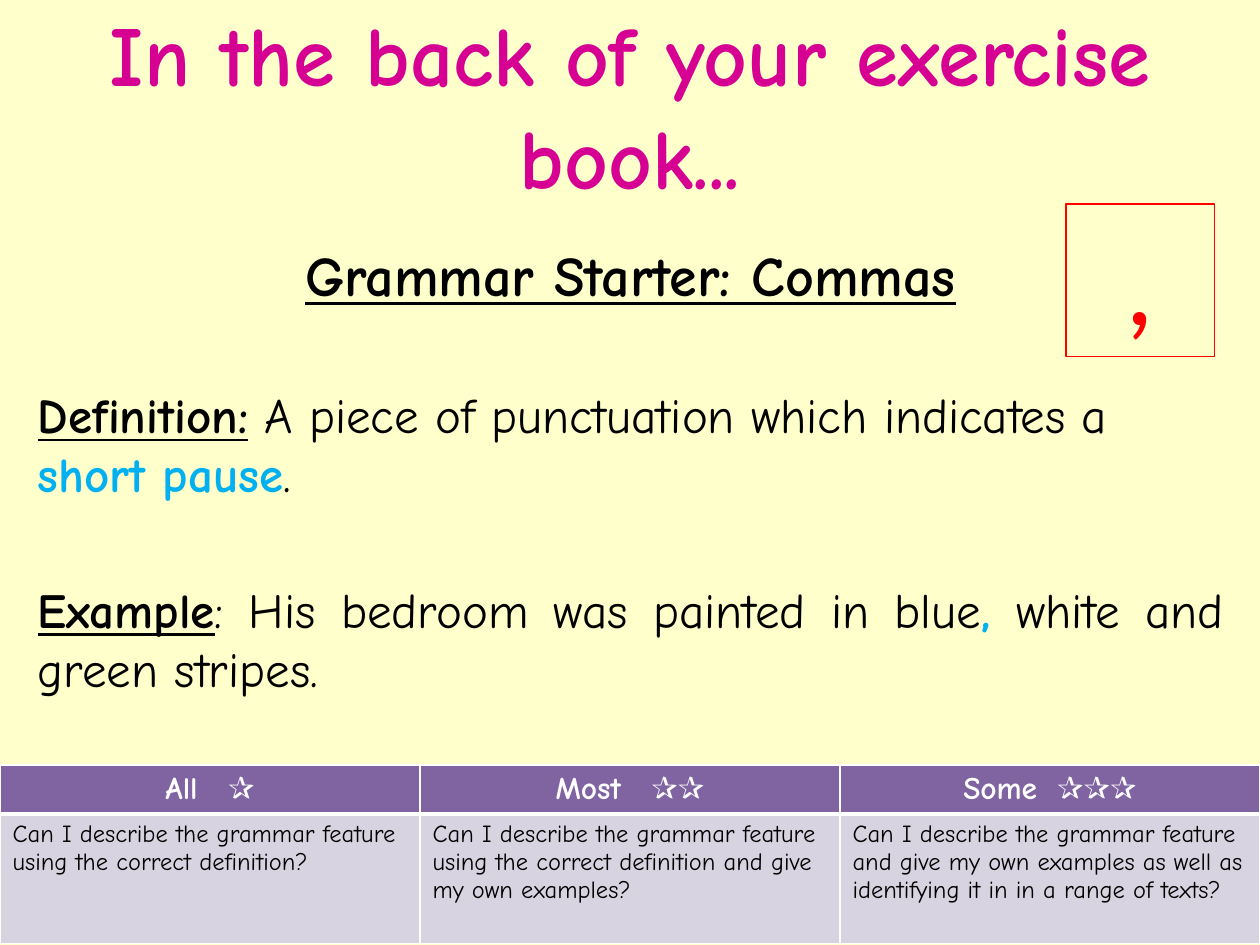
from lxml.etree import SubElement
from pptx import Presentation
from pptx.dml.color import RGBColor
from pptx.enum.shapes import MSO_SHAPE
from pptx.enum.text import MSO_ANCHOR, MSO_AUTO_SIZE, PP_ALIGN
from pptx.oxml import parse_xml
from pptx.oxml.ns import nsdecls, qn
from pptx.util import Inches, Pt

FONT = "Comic Neue"
COLOURS = {
    "cream": "FFFFCC", "pink": "D60093", "black": "000000", "blue": "00B0F0",
    "white": "FFFFFF", "purple": "8064A2", "lilac": "D8D3E0", "red": "FF0000",
}
DEFINITION = [
    ("Definition:", "heading"),
    (" A piece of punctuation which indicates a ", "plain"),
    ("short pause", "accent"),
    (".", "plain"),
]
EXAMPLE = [
    ("Example", "heading"),
    (": His bedroom was painted in blue", "plain"),
    (",", "accent"),
    (" white and green stripes.", "plain"),
]
TARGETS = [
    ("All", "✰", 11, "Can I describe the grammar feature using the correct definition?"),
    ("Most", "✰✰", 11, "Can I describe the grammar feature using the correct definition "
     "and give my own examples?"),
    ("Some", "✰✰✰", 5, "Can I describe the grammar feature and give my own examples "
     "as well as identifying it in in a range of texts?"),
]


def colour(name):
    """Return the named colour."""
    return RGBColor.from_string(COLOURS[name])


def place(shape, box):
    """Move a shape to a box of left, top, width and height in inches."""
    shape.left, shape.top, shape.width, shape.height = map(Inches, box)


def style(span, size, tint, bold=False, underline=False, font=FONT):
    """Format one run."""
    span.font.name = font
    span.font.size = Pt(size)
    span.font.bold = bold
    span.font.underline = underline
    span.font.color.rgb = colour(tint)


def add_title(page, box):
    """Fill the title placeholder."""
    title = page.shapes.title
    place(title, box)
    frame = title.text_frame
    frame.text = "In the back of your exercise book..."
    frame.auto_size = MSO_AUTO_SIZE.NONE
    frame.vertical_anchor = MSO_ANCHOR.MIDDLE
    frame.paragraphs[0].alignment = PP_ALIGN.CENTER
    style(frame.paragraphs[0].runs[0], 48.6, "pink", bold=True)


def add_lesson(page, box):
    """Fill the body placeholder with the heading, definition and example."""
    body = page.placeholders[1]
    place(body, box)
    frame = body.text_frame
    frame.auto_size = MSO_AUTO_SIZE.NONE
    paragraphs = [
        ([("Grammar Starter: Commas", "heading")], 32, PP_ALIGN.CENTER, 0),
        (DEFINITION, 28, PP_ALIGN.LEFT, 44),
        (EXAMPLE, 28, PP_ALIGN.JUSTIFY, 44),
    ]
    for index, (pieces, size, alignment, gap) in enumerate(paragraphs):
        para = frame.add_paragraph() if index else frame.paragraphs[0]
        para.alignment = alignment
        para.space_before = Pt(gap)
        properties = para._p.get_or_add_pPr()
        properties.set("marL", "0")
        properties.set("indent", "0")
        SubElement(properties, qn("a:buNone"))
        for text, kind in pieces:
            span = para.add_run()
            span.text = text
            style(span, size, "blue" if kind == "accent" else "black",
                  bold=kind != "plain", underline=kind == "heading")


def paint_cell(cell, fill, bottom):
    """Give a table cell its fill and white borders."""
    cell.fill.solid()
    cell.fill.fore_color.rgb = colour(fill)
    properties = cell._tc.get_or_add_tcPr()
    for index, (side, width) in enumerate((("L", 1), ("R", 1), ("T", 1), ("B", bottom))):
        properties.insert(index, parse_xml(
            f'<a:ln{side} {nsdecls("a")} w="{Pt(width)}"><a:solidFill>'
            f'<a:srgbClr val="{COLOURS["white"]}"/></a:solidFill></a:ln{side}>'))


def add_targets(page, box):
    """Add the table of learning targets."""
    left, top, width, height = map(Inches, box)
    table = page.shapes.add_table(2, len(TARGETS), left, top, width, height).table
    table.rows[0].height = Inches(0.38)
    table.rows[1].height = height - Inches(0.38)
    for column, (level, stars, gap, question) in enumerate(TARGETS):
        header, target = table.cell(0, column), table.cell(1, column)
        paint_cell(header, "purple", 3)
        paint_cell(target, "lilac", 1)
        para = header.text_frame.paragraphs[0]
        para.alignment = PP_ALIGN.CENTER
        for text in (level, " ", stars):
            span = para.add_run()
            span.text = text
            style(span, 18, "white", bold=True)
        para.runs[1].font._element.set("spc", str(gap * 100))
        target.text_frame.text = question
        style(target.text_frame.paragraphs[0].runs[0], 14, "black")


def add_comma(page, box):
    """Add the outlined square that shows a comma."""
    square = page.shapes.add_shape(MSO_SHAPE.RECTANGLE, *map(Inches, box))
    square.shadow.inherit = False
    square.fill.background()
    square.line.color.rgb = colour("red")
    square.line.width = Pt(1)
    frame = square.text_frame
    frame.text = ","
    frame.vertical_anchor = MSO_ANCHOR.TOP
    frame.paragraphs[0].alignment = PP_ALIGN.CENTER
    style(frame.paragraphs[0].runs[0], 66, "red", font="Calibri")


def main():
    """Build and save the deck."""
    deck = Presentation()
    deck.slide_width, deck.slide_height = Inches(10), Inches(7.5)
    page = deck.slides.add_slide(deck.slide_layouts[1])
    page.background.fill.solid()
    page.background.fill.fore_color.rgb = colour("cream")
    add_title(page, (0, 0.02, 10, 1.61))
    add_lesson(page, (0.2, 1.86, 9.61, 4.84))
    add_targets(page, (0, 6.07, 10, 1.41))
    add_comma(page, (8.46, 1.62, 1.18, 1.21))
    deck.save("out.pptx")


if __name__ == "__main__":
    main()
